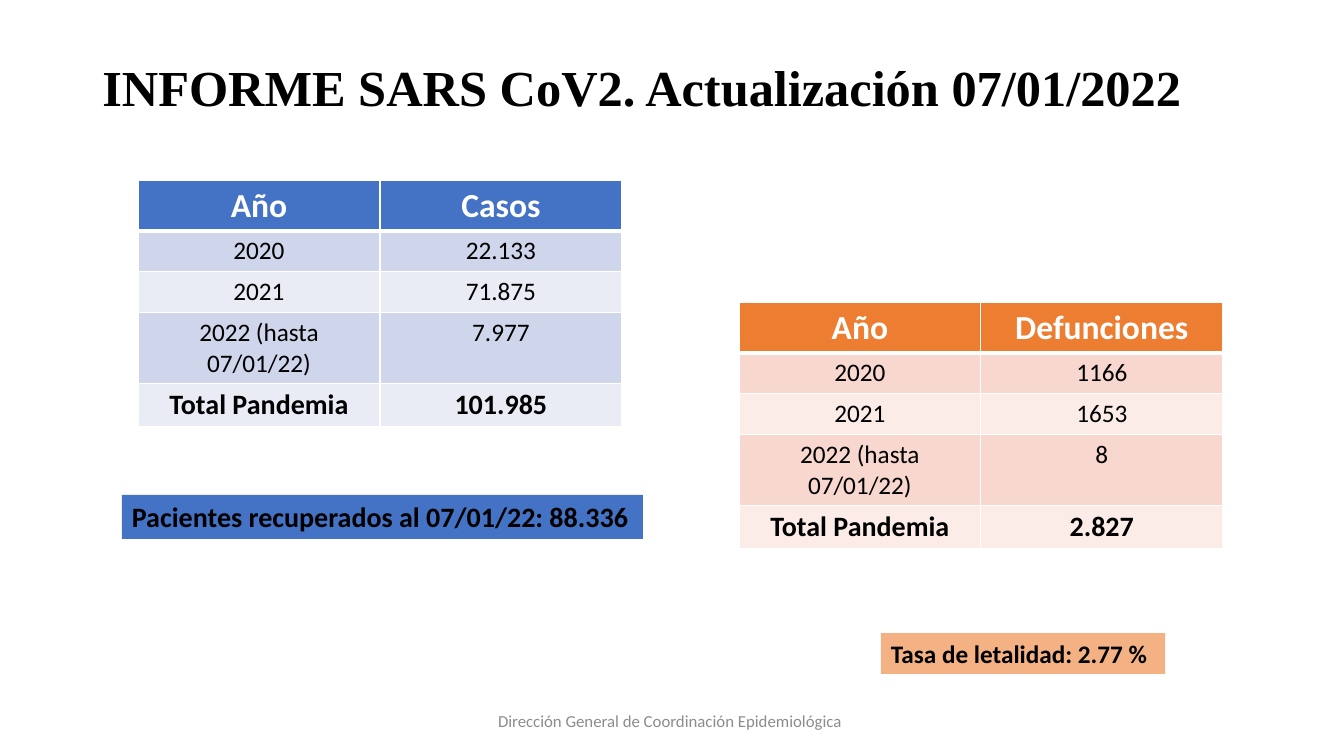
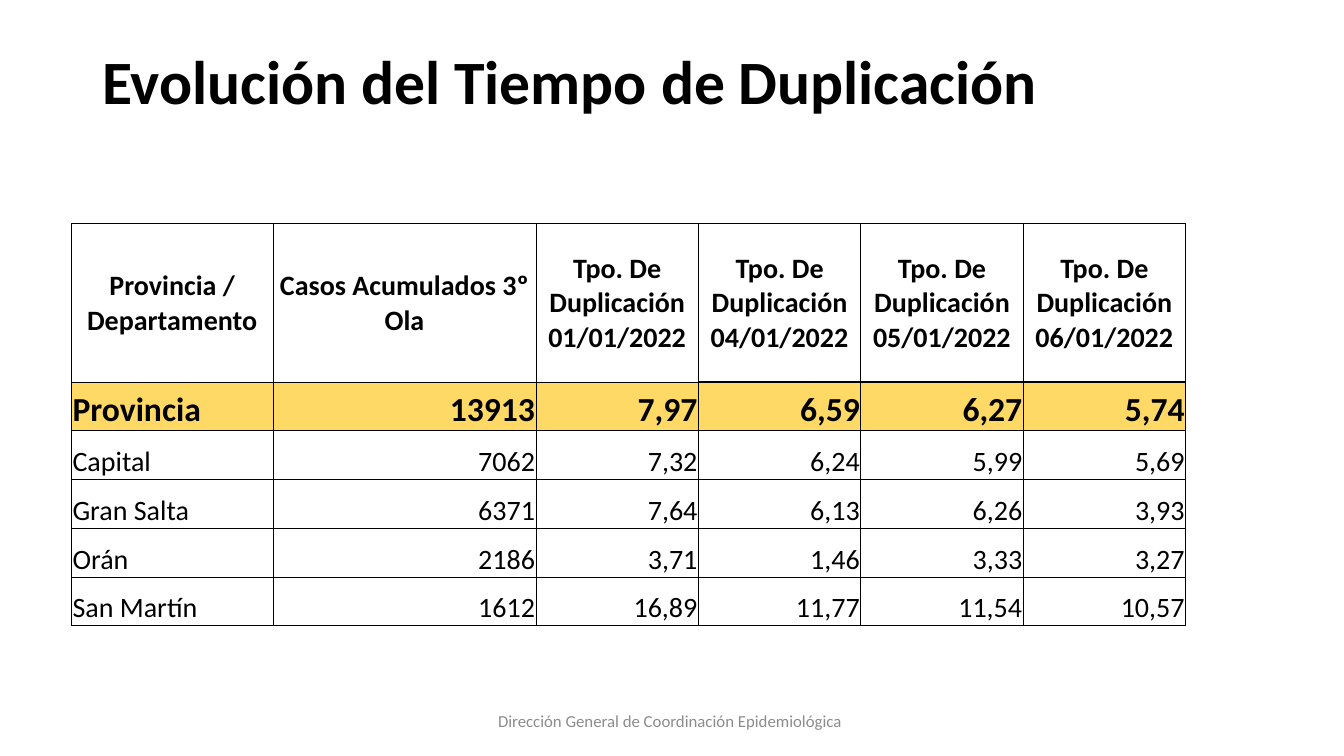
from lxml import etree
from pptx import Presentation
from pptx.dml.color import RGBColor
from pptx.enum import shapes, text as text_enum
from pptx.oxml import ns
from pptx.util import Pt

LEFT, CENTER, RIGHT = (text_enum.PP_ALIGN.LEFT, text_enum.PP_ALIGN.CENTER,
                       text_enum.PP_ALIGN.RIGHT)
TOP, MIDDLE, BOTTOM = (text_enum.MSO_ANCHOR.TOP, text_enum.MSO_ANCHOR.MIDDLE,
                       text_enum.MSO_ANCHOR.BOTTOM)

BLACK = RGBColor(0x00, 0x00, 0x00)
WHITE = RGBColor(0xFF, 0xFF, 0xFF)
GRAY = RGBColor(0x8C, 0x8C, 0x8C)
BLUE = RGBColor(0x44, 0x72, 0xC4)
BLUE_BANDS = (RGBColor(0xCF, 0xD5, 0xEA), RGBColor(0xE9, 0xEB, 0xF5))
ORANGE = RGBColor(0xED, 0x7D, 0x31)
ORANGE_BANDS = (RGBColor(0xF8, 0xD7, 0xCE), RGBColor(0xFC, 0xEC, 0xE8))
PEACH = RGBColor(0xF4, 0xB1, 0x83)
YELLOW = RGBColor(0xFF, 0xD9, 0x66)

FOOTER = "Dirección General de Coordinación Epidemiológica "
REPORT_TITLE = "INFORME SARS CoV2. Actualización 07/01/2022"
DOUBLING_TITLE = "Evolución del Tiempo de Duplicación"
PERIODS = ["Año", "2020", "2021", "2022 (hasta 07/01/22)", "Total Pandemia"]
SUMMARIES = [
    (98.6, 128.9, BLUE, BLUE_BANDS,
     ["Casos", "22.133", "71.875", "7.977", "101.985"]),
    (527.8, 216, ORANGE, ORANGE_BANDS,
     ["Defunciones", "1166", "1653", "8", "2.827"]),
]
CALLOUTS = [
    ("Pacientes recuperados al 07/01/22: 88.336", (87.1, 353.5, 372.2, 31.5), BLUE, 20),
    ("Tasa de letalidad: 2.77 %", (629.3, 452.2, 203, 29.1), PEACH, 18),
]
DATES = ["01/01/2022", "04/01/2022", "05/01/2022", "06/01/2022"]
DOUBLING_ROWS = [
    ["Provincia / Departamento", "Casos Acumulados 3º Ola"]
    + [f"Tpo. De Duplicación {date}" for date in DATES],
    ["Provincia", "13913", "7,97", "6,59", "6,27", "5,74"],
    ["Capital", "7062", "7,32", "6,24", "5,99", "5,69"],
    ["Gran Salta", "6371", "7,64", "6,13", "6,26", "3,93"],
    ["Orán", "2186", "3,71", "1,46", "3,33", "3,27"],
    ["San Martín", "1612", "16,89", "11,77", "11,54", "10,57"],
]


def write_text(frame, text, size=18, color=BLACK, bold=False, font="Calibri",
               align=LEFT, anchor=TOP, wrap=True, line_spacing=None):
    frame.word_wrap = wrap
    frame.vertical_anchor = anchor
    paragraph = frame.paragraphs[0]
    paragraph.alignment = align
    paragraph.line_spacing = line_spacing
    run = paragraph.add_run()
    run.text = text
    run.font.name = font
    run.font.size = Pt(size)
    run.font.bold = bold
    run.font.color.rgb = color


def add_text(slide, box, text, **style):
    shape = slide.shapes.add_textbox(*map(Pt, box))
    write_text(shape.text_frame, text, **style)


def add_page(presentation, title, title_height, **title_style):
    slide = presentation.slides.add_slide(presentation.slide_layouts[6])
    add_text(slide, (66, 28.75, 828, title_height), title, bold=True,
             anchor=MIDDLE, line_spacing=0.9, **title_style)
    add_text(slide, (318, 500.5, 324, 28.75), FOOTER, size=12, color=GRAY,
             align=CENTER, anchor=MIDDLE)
    return slide


def add_table(slide, left, top, widths, heights):
    frame = slide.shapes.add_table(len(heights), len(widths), Pt(left), Pt(top),
                                   Pt(sum(widths)), Pt(sum(heights)))
    table = frame.table
    table.first_row = table.horz_banding = False
    for column, width in zip(table.columns, widths):
        column.width = Pt(width)
    for row, height in zip(table.rows, heights):
        row.height = Pt(height)
    return table


def fill_cell(cell, text, fill, border_color, borders, **style):
    write_text(cell.text_frame, text, **style)
    cell.vertical_anchor = style.get("anchor", TOP)
    if fill is None:
        cell.fill.background()
    else:
        cell.fill.solid()
        cell.fill.fore_color.rgb = fill
    properties = cell._tc.get_or_add_tcPr()
    for index, (side, width) in enumerate(zip("LRTB", borders)):
        line = etree.Element(ns.qn(f"a:ln{side}"), w=str(Pt(width)))
        solid = etree.SubElement(line, ns.qn("a:solidFill"))
        etree.SubElement(solid, ns.qn("a:srgbClr"), val=str(border_color))
        properties.insert(index, line)


def add_summary(slide, left, top, header_fill, bands, values):
    table = add_table(slide, left, top, [172.8] * 2, [29.2] * len(PERIODS))
    last = len(PERIODS) - 1
    for row, labels in enumerate(zip(PERIODS, values)):
        header = row == 0
        for column, label in enumerate(labels):
            fill_cell(table.cell(row, column), label,
                      header_fill if header else bands[(row - 1) % 2],
                      WHITE, (1, 1, 3 if row == 1 else 1, 3 if header else 1),
                      size={0: 24, last: 20}.get(row, 18),
                      color=WHITE if header else BLACK,
                      bold=row in (0, last), align=CENTER)


def add_callout(slide, text, box, fill, size):
    shape = slide.shapes.add_shape(shapes.MSO_SHAPE.RECTANGLE, *map(Pt, box))
    shape.shadow.inherit = False
    shape.fill.solid()
    shape.fill.fore_color.rgb = fill
    shape.line.fill.background()
    write_text(shape.text_frame, text, size=size, bold=True, wrap=False)


def add_doubling_table(slide):
    widths = [143.8, 188] + [116] * len(DATES)
    heights = [113] + [34.8] * (len(DOUBLING_ROWS) - 1)
    table = add_table(slide, 51.1, 159.9, widths, heights)
    last_row, last_column = len(heights) - 1, len(widths) - 1
    for row, labels in enumerate(DOUBLING_ROWS):
        header, province = row == 0, row == 1
        for column, label in enumerate(labels):
            cell = table.cell(row, column)
            cell.margin_left = cell.margin_right = cell.margin_top = Pt(0.7)
            cell.margin_bottom = 0
            heavy = (column == 0 or (column > 2 and not header),
                     column == last_column or (column > 1 and not header),
                     header or (province and column > 2),
                     row == last_row or (header and column > 2))
            fill_cell(cell, label, YELLOW if province else None, BLACK,
                      [1 if side else 0.5 for side in heavy],
                      size=24 if province else 20, bold=header or province,
                      align=CENTER if header else RIGHT if column else LEFT,
                      anchor=MIDDLE if header else BOTTOM)


def main():
    presentation = Presentation()
    presentation.slide_width, presentation.slide_height = Pt(960), Pt(540)
    report = add_page(presentation, REPORT_TITLE, 72, size=36, font="Times New Roman")
    for summary in SUMMARIES:
        add_summary(report, *summary)
    for callout in CALLOUTS:
        add_callout(report, *callout)
    doubling = add_page(presentation, DOUBLING_TITLE, 63.5, size=44)
    add_doubling_table(doubling)
    presentation.save("out.pptx")


if __name__ == "__main__":
    main()
